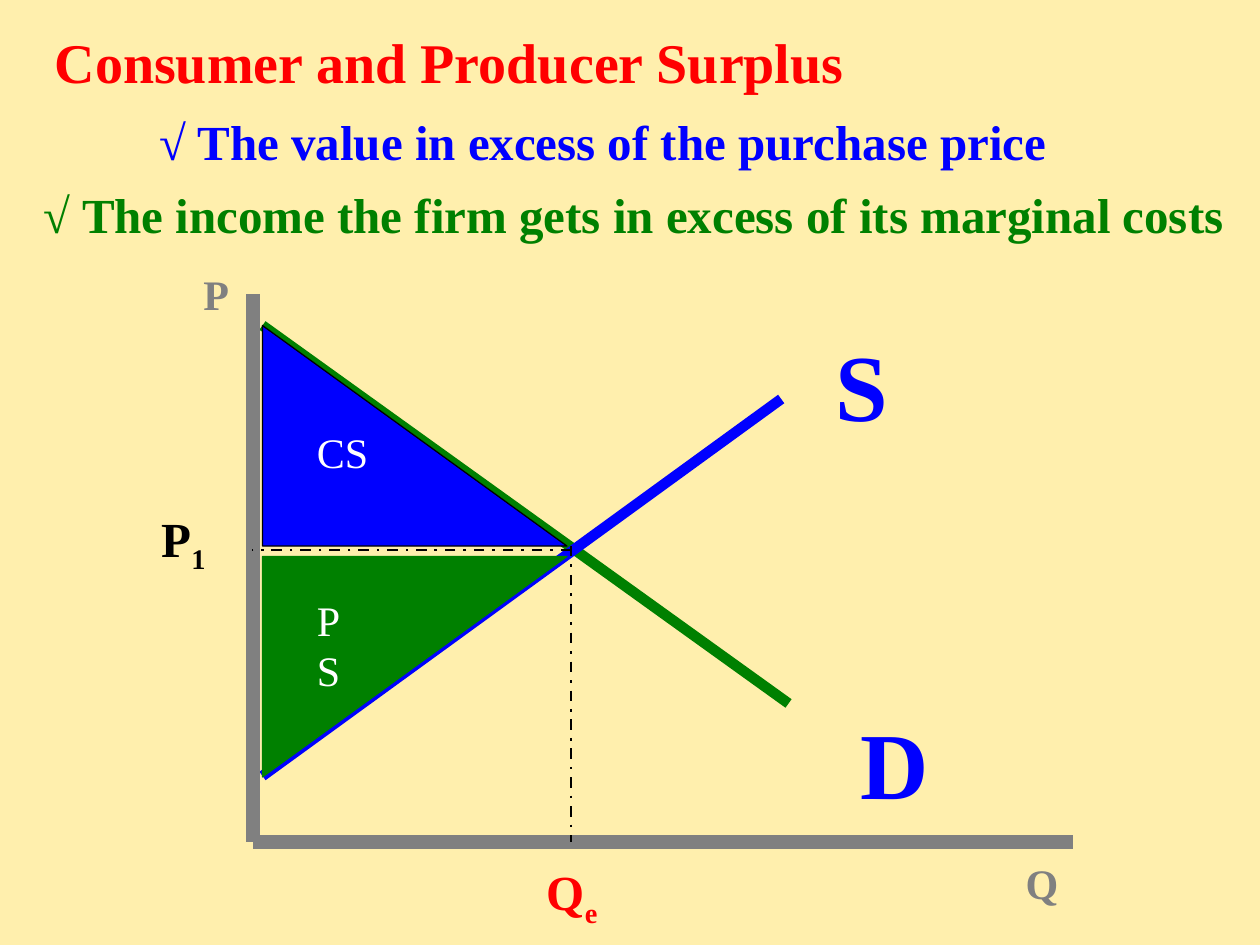
from lxml import etree
from pptx import Presentation
from pptx import util as u
from pptx.dml.color import RGBColor
from pptx.enum import dml, shapes, text
from pptx.oxml import ns

CREAM = RGBColor(0xFF, 0xEF, 0xAD)
RED = RGBColor(0xFF, 0, 0)
BLUE = RGBColor(0, 0, 0xFF)
GREEN = RGBColor(0, 0x80, 0)
GRAY = RGBColor(0x80, 0x80, 0x80)
BLACK = RGBColor(0, 0, 0)
WHITE = RGBColor(0xFF, 0xFF, 0xFF)

COLUMNS, ROWS = 120, 90
deck = Presentation()
deck.slide_width, deck.slide_height = u.Inches(10), u.Inches(7.5)
page = deck.slides.add_slide(deck.slide_layouts[5])
page.background.fill.solid()
page.background.fill.fore_color.rgb = CREAM


def place(left, top, width, height):
    return (round(left * deck.slide_width / COLUMNS), round(top * deck.slide_height / ROWS),
            round(width * deck.slide_width / COLUMNS), round(height * deck.slide_height / ROWS))


def write(box, words, subscript, size, color, bold, wrap):
    frame = box.text_frame
    frame.word_wrap = wrap
    frame.auto_size = text.MSO_AUTO_SIZE.SHAPE_TO_FIT_TEXT
    frame.vertical_anchor = text.MSO_ANCHOR.TOP
    para = frame.paragraphs[0]
    para.alignment = text.PP_ALIGN.LEFT
    para.line_spacing = 1.0
    para.font.name = "Times New Roman"
    para.font.size = u.Pt(size)
    para.font.bold = bold
    para.font.color.rgb = color
    para.add_run().text = words
    if subscript:
        span = para.add_run()
        span.text = subscript
        span.font._element.set("baseline", "-25000")


title = page.shapes.title
title.left, title.top, title.width, title.height = place(4, 2, 77.8, 7.5)
write(title, "Consumer and Producer Surplus", "", 32, RED, True, False)

origin_x, origin_y = 24.1, 80.2
price, quantity = 52.4, 54.4
curve_start = 25
DASH = dml.MSO_LINE.DASH_DOT
lines = [
    (curve_start, 31, 75.1, 67, GREEN, 6, None),
    (74.4, 38, curve_start, 73.9, BLUE, 6, None),
    (origin_x, 28, origin_x, origin_y, GRAY, 8, None),
    (origin_x, origin_y, 102.2, origin_y, GRAY, 8, None),
    (quantity, price, 24, price, BLACK, 1.5, DASH),
    (quantity, 52, quantity, origin_y, BLACK, 1.5, DASH),
]
for x1, y1, x2, y2, color, weight, dash in lines:
    line = page.shapes.add_connector(shapes.MSO_CONNECTOR.STRAIGHT, *place(x1, y1, x2, y2))
    line.line.color.rgb = color
    line.line.width = u.Pt(weight)
    if dash:
        line.line.dash_style = dash
    etree.SubElement(line._element.spPr, ns.qn("a:effectLst"))

for top, fill, outline, flipped in [(31, BLUE, BLACK, False), (53, GREEN, GREEN, True)]:
    surplus = page.shapes.add_shape(shapes.MSO_SHAPE.RIGHT_TRIANGLE, *place(curve_start, top, 29, 21))
    surplus.shadow.inherit = False
    surplus.fill.solid()
    surplus.fill.fore_color.rgb = fill
    surplus.line.color.rgb = outline
    surplus.line.width = u.Pt(0.75)
    if flipped:
        surplus._element.spPr.xfrm.set("flipV", "1")

labels = [
    (14, 10, 87.1, 6.8, "√ The value in excess of the purchase price", "", 28, BLUE, True, False),
    (3, 17, 115, 6.8, "√ The income the firm gets in excess of its marginal costs", "", 28, GREEN, True, False),
    (80.8, 66.6, 9, 12, "D", "", 54, BLUE, True, True),
    (78.4, 30.6, 7.4, 12, "S", "", 54, BLUE, True, True),
    (14.2, 47.8, 9.8, 6.8, "P", "1", 28, BLACK, True, True),
    (50.9, 81.5, 7.6, 6.8, "Q", "e", 28, RED, True, True),
    (18.2, 25, 3.8, 6, "P", "", 24, GRAY, True, True),
    (96.5, 81.1, 3.8, 6, "Q", "", 24, GRAY, True, True),
    (29, 40, 7.3, 6, "CS", "", 24, WHITE, False, False),
    (29, 56, 6.8, 6, "PS", "", 24, WHITE, False, False),
]
for left, top, width, height, *content in labels:
    write(page.shapes.add_textbox(*place(left, top, width, height)), *content)

deck.save("out.pptx")
